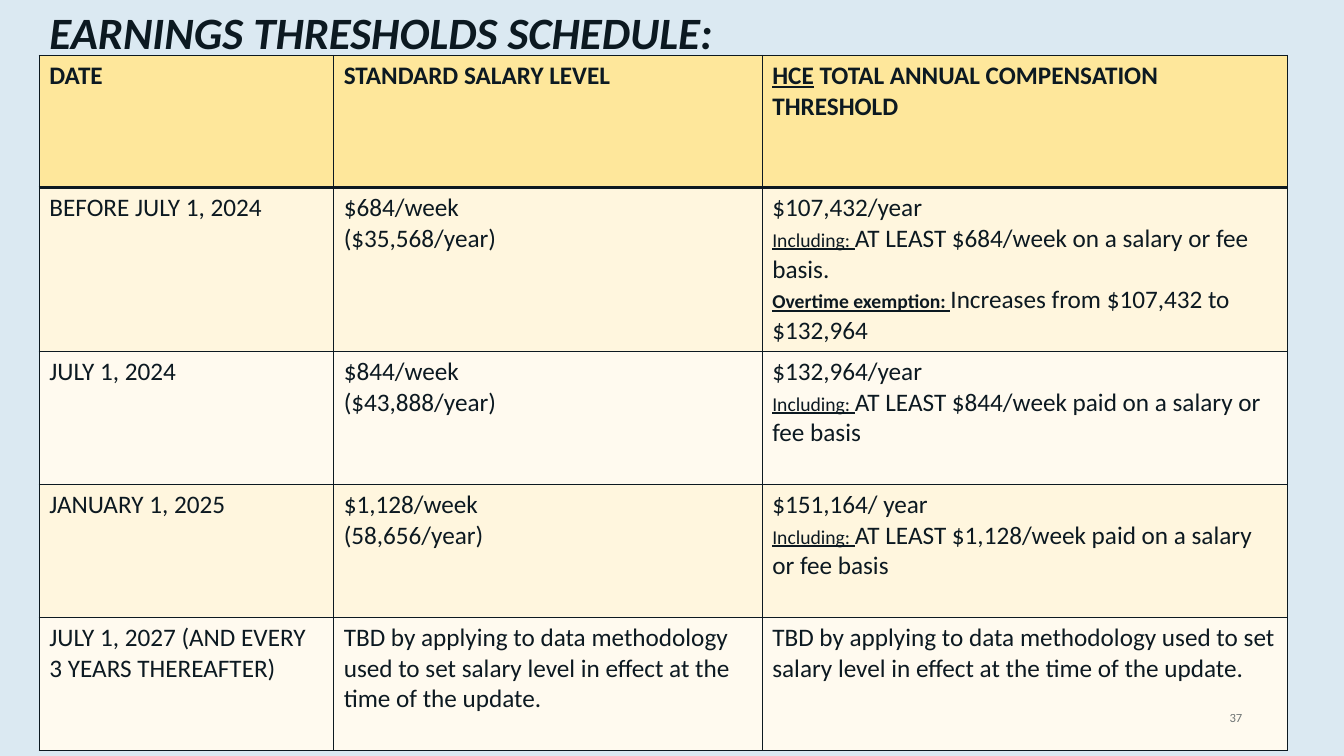
from lxml.etree import SubElement
from pptx import Presentation
from pptx.dml.color import RGBColor
from pptx.enum.text import MSO_ANCHOR, MSO_AUTO_SIZE, PP_ALIGN
from pptx.oxml.ns import qn
from pptx.util import Inches, Pt

COLORS = {
    "ink": "0C1921",
    "page": "DBE9F2",
    "header": "FEE79B",
    "odd row": "FFF6DE",
    "even row": "FFFAEF",
}


def add_span(para, text, size=18, bold=False, underline=False):
    span = para.add_run()
    span.text = text
    span.font.name = "Calibri"
    span.font.size = Pt(size)
    span.font.bold = bold
    span.font.underline = underline
    span.font.color.rgb = RGBColor.from_string(COLORS["ink"])
    return span


def add_border(cell, side, width):
    line = SubElement(cell._tc.get_or_add_tcPr(), qn(f"a:ln{side}"), w=str(Pt(width)))
    fill = SubElement(line, qn("a:solidFill"))
    SubElement(fill, qn("a:srgbClr"), val=COLORS["ink"])


deck = Presentation()
deck.slide_width = Inches(13.33)
deck.slide_height = Inches(7.5)
page = deck.slides.add_slide(deck.slide_layouts[5])
page.background.fill.solid()
page.background.fill.fore_color.rgb = RGBColor.from_string(COLORS["page"])

# Schedule: each cell is a list of paragraphs, each paragraph a list of (text, style)
plain, heading = {}, {"bold": True}
label = {"size": 14, "underline": True}
including = ("Including: ", label)
update = [[("TBD by applying to data methodology used to set salary level "
            "in effect at the time of the update.", plain)]]
schedule = [
    [
        [[("DATE", heading)]],
        [[("STANDARD SALARY LEVEL", heading)]],
        [[("HCE", {"bold": True, "underline": True}),
          (" TOTAL ANNUAL COMPENSATION THRESHOLD", heading)]],
    ],
    [
        [[("BEFORE JULY 1, 2024", plain)]],
        [[("$684/week", plain)], [("($35,568/year)", plain)]],
        [[("$107,432/year", plain)],
         [including, ("AT LEAST $684/week on a salary or fee basis.", plain)],
         [("Overtime exemption: ", {**label, "bold": True}),
          ("Increases from $107,432 to $132,964", plain)]],
    ],
    [
        [[("JULY 1, 2024", plain)]],
        [[("$844/week", plain)], [("($43,888/year)", plain)]],
        [[("$132,964/year", plain)],
         [including, ("AT LEAST $844/week paid on a salary or fee basis", plain)]],
    ],
    [
        [[("JANUARY 1, 2025", plain)]],
        [[("$1,128/week", plain)], [("(58,656/year)", plain)]],
        [[("$151,164/ year", plain)],
         [including, ("AT LEAST $1,128/week paid on a salary or fee basis", plain)]],
    ],
    [
        [[("JULY 1, 2027 (AND EVERY 3 YEARS THEREAFTER)", plain)]],
        update,
        update,
    ],
]

# Table
table = page.shapes.add_table(
    len(schedule), 3, Inches(0.39), Inches(0.55), Inches(12.38), Inches(6.59)).table
table.first_row = False
table.horz_banding = False
for column, width in zip(table.columns, (2.92, 4.25, 5.21)):
    column.width = Inches(width)

for row_index, row in enumerate(schedule):
    table.rows[row_index].height = Inches(1.31 if row_index == 0 else 1.32)
    if row_index == 0:
        row_color = COLORS["header"]
    else:
        row_color = COLORS["odd row" if row_index % 2 else "even row"]
    for column_index, paragraphs in enumerate(row):
        cell = table.cell(row_index, column_index)
        add_border(cell, "L", 1)
        add_border(cell, "R", 1)
        add_border(cell, "T", 3 if row_index == 1 else 1)
        add_border(cell, "B", 3 if row_index == 0 else 1)
        cell.fill.solid()
        cell.fill.fore_color.rgb = RGBColor.from_string(row_color)
        for number, spans in enumerate(paragraphs):
            frame = cell.text_frame
            para = frame.add_paragraph() if number else frame.paragraphs[0]
            for text, style in spans:
                add_span(para, text, **style)

# Page number
number_box = page.shapes.add_textbox(Inches(9.42), Inches(6.92), Inches(3), Inches(0.4))
number_box.text_frame.word_wrap = True
number_box.text_frame.vertical_anchor = MSO_ANCHOR.MIDDLE
para = number_box.text_frame.paragraphs[0]
para.alignment = PP_ALIGN.RIGHT
span = add_span(para, "37", size=9)
ink = span._r.find(".//" + qn("a:srgbClr"))
SubElement(ink, qn("a:alpha"), val="60000")

# Title, in front of the table
title = page.shapes.title
title.left, title.top = Inches(0.39), Inches(0)
title.width, title.height = Inches(10.36), Inches(0.64)
title.text_frame.word_wrap = True
title.text_frame.auto_size = MSO_AUTO_SIZE.SHAPE_TO_FIT_TEXT
title.text_frame.vertical_anchor = MSO_ANCHOR.TOP
para = title.text_frame.paragraphs[0]
para.alignment = PP_ALIGN.LEFT
span = add_span(para, "EARNINGS THRESHOLDS SCHEDULE:", size=32, bold=True)
span.font.italic = True
title.element.getparent().append(title.element)

deck.save("out.pptx")
